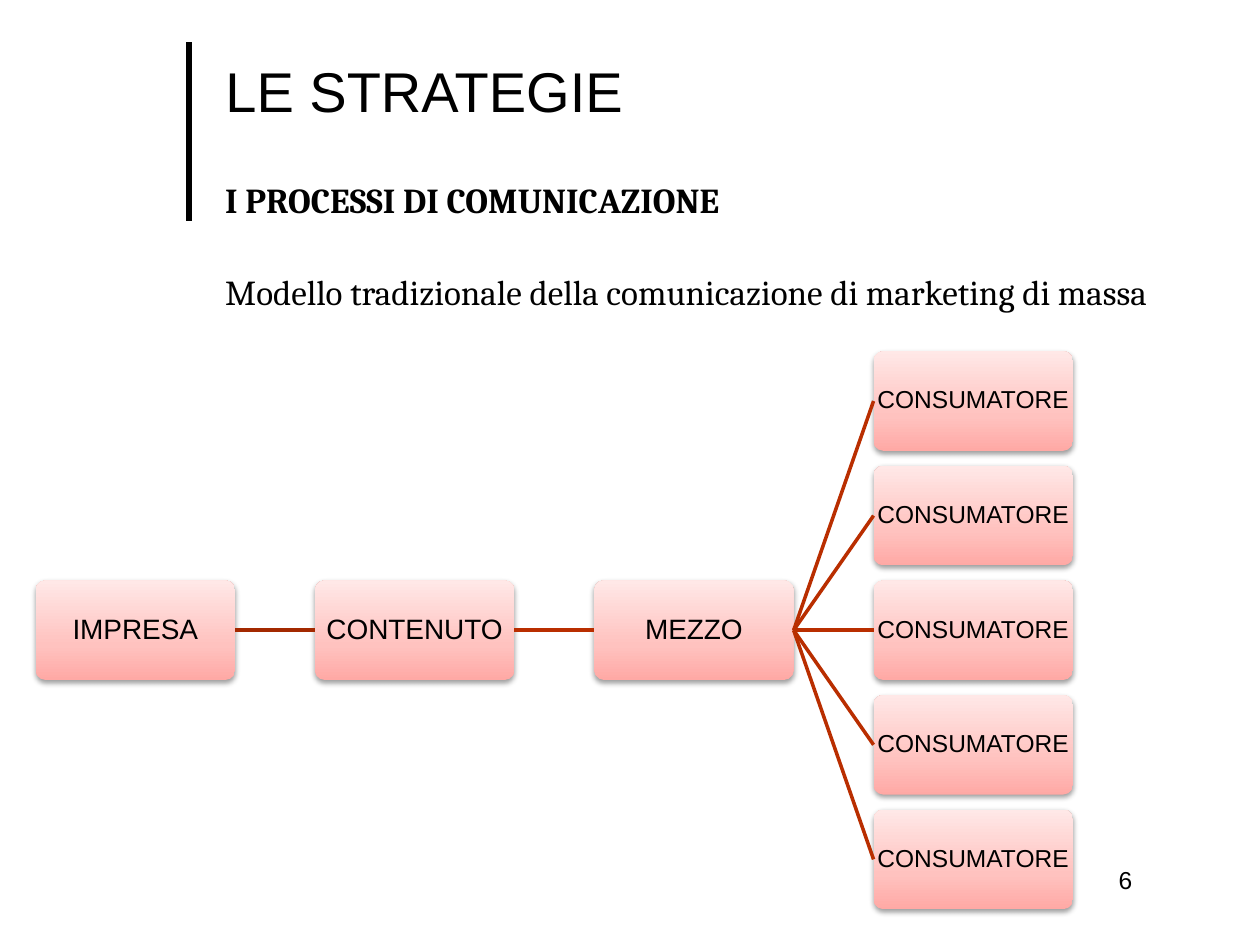
from copy import deepcopy

from lxml import etree
from pptx import Presentation
from pptx.dml.color import RGBColor
from pptx.enum.shapes import MSO_CONNECTOR as Line, MSO_SHAPE as Shape
from pptx.enum.text import MSO_ANCHOR as Anchor, PP_ALIGN as Align
from pptx.oxml import parse_xml
from pptx.oxml.ns import nsdecls, qn
from pptx.util import Cm, Pt

BLACK = RGBColor(0x00, 0x00, 0x00)
FIRST_LINK = RGBColor(0xA3, 0x29, 0x00)
LINK = RGBColor(0xB9, 0x2E, 0x00)
BOX_STOPS = [
    (0, RGBColor(0xFF, 0xA9, 0xA5)),
    (0.35, RGBColor(0xFF, 0xC2, 0xBF)),
    (1, RGBColor(0xFF, 0xE8, 0xE7)),
]
BOX_SHADOW = (
    f'<a:outerShdw {nsdecls("a")} blurRad="40000" dist="20000" dir="5400000" rotWithShape="0">'
    '<a:srgbClr val="000000"><a:alpha val="38000"/></a:srgbClr></a:outerShdw>'
)

BOX_WIDTH, BOX_HEIGHT = 4.02, 2.01
LEFT, COLUMN_STEP = 0.72, 5.63
MIDDLE_TOP, ROW_STEP = 11.7, 2.31

prs = Presentation()
prs.slide_width, prs.slide_height = Cm(25.4), Cm(19.05)
slide = prs.slides.add_slide(prs.slide_layouts[5])
shapes = slide.shapes


def add_box(column, row, label, size):
    """Add a labelled box; row 0 is the main axis of the diagram."""
    box = shapes.add_shape(
        Shape.ROUNDED_RECTANGLE,
        Cm(LEFT + column * COLUMN_STEP), Cm(MIDDLE_TOP + row * ROW_STEP),
        Cm(BOX_WIDTH), Cm(BOX_HEIGHT),
    )
    box.adjustments[0] = 0.1
    box.line.fill.background()
    box.fill.gradient()
    box.fill.gradient_angle = 90
    properties = box._element.spPr
    stop_list = properties.find(".//" + qn("a:gsLst"))
    stop_list.insert(1, deepcopy(stop_list[0]))
    for stop, (position, color) in zip(box.fill.gradient_stops, BOX_STOPS):
        stop.position = position
        stop.color.rgb = color
    box.shadow.inherit = False
    properties.find(qn("a:effectLst")).append(parse_xml(BOX_SHADOW))

    frame = box.text_frame
    frame_format = {
        "word_wrap": False, "vertical_anchor": Anchor.MIDDLE,
        "margin_left": Cm(0.03), "margin_right": Cm(0.03),
        "margin_top": Cm(0.03), "margin_bottom": Cm(0.03),
    }
    for name, value in frame_format.items():
        setattr(frame, name, value)
    paragraph = frame.paragraphs[0]
    paragraph.text = label
    paragraph.alignment = Align.CENTER
    paragraph.line_spacing = 0.9
    paragraph.font.color.rgb = BLACK
    for name, value in {"name": "Arial", "size": Pt(size)}.items():
        setattr(paragraph.font, name, value)
    return box


def add_line(start, end, color, width):
    line = shapes.add_connector(Line.STRAIGHT, *start, *end)
    line.line.color.rgb = color
    line.line.width = Pt(width)
    etree.SubElement(line._element.spPr, qn("a:effectLst"))
    return line


# Heading
add_line((Cm(3.81), Cm(4.45)), (Cm(3.81), Cm(0.84)), BLACK, 3)
title = shapes.title
title_place = {"left": Cm(4.29), "top": Cm(0.69), "width": Cm(20.19), "height": Cm(2.24)}
for name, value in title_place.items():
    setattr(title, name, value)
title.text_frame.text = "LE STRATEGIE"
title.text_frame.vertical_anchor = Anchor.MIDDLE
heading = title.text_frame.paragraphs[0]
heading.alignment = Align.LEFT
heading.font.color.rgb = BLACK
for name, value in {"name": "Arial", "size": Pt(32)}.items():
    setattr(heading.font, name, value)

# Introduction
introduction = shapes.add_textbox(Cm(4.29), Cm(3.56), Cm(20.19), Cm(3.2)).text_frame
introduction.word_wrap = True
introduction.text = (
    "I PROCESSI DI COMUNICAZIONE\n"
    "Modello tradizionale della comunicazione di marketing di massa"
)
for paragraph, bold in zip(introduction.paragraphs, (True, False)):
    paragraph.alignment = Align.JUSTIFY
    paragraph.line_spacing = 0.9
    paragraph.font.color.rgb = BLACK
    for name, value in {"name": "Cambria", "size": Pt(20), "bold": bold}.items():
        setattr(paragraph.font, name, value)
introduction.paragraphs[1].space_before = Pt(31)

# Page number
page_number = shapes.add_textbox(Cm(22.3), Cm(17.32), Cm(2.4), Cm(1.27)).text_frame
page_number.word_wrap = True
page_number.text = "6"
page_font = page_number.paragraphs[0].font
page_font.color.rgb = BLACK
for name, value in {"name": "Arial", "size": Pt(14)}.items():
    setattr(page_font, name, value)

# Communication model
company, content, medium = [
    add_box(column, 0, label, 16)
    for column, label in enumerate(["IMPRESA", "CONTENUTO", "MEZZO"])
]
consumers = [add_box(3, row, "CONSUMATORE", 14) for row in range(-2, 3)]

links = [(company, content, FIRST_LINK), (content, medium, LINK)]
links += [(medium, consumer, LINK) for consumer in consumers]
for source, target, color in links:
    link = add_line((0, 0), (0, 0), color, 2)
    link.begin_connect(source, 3)
    link.end_connect(target, 1)

prs.save("out.pptx")
